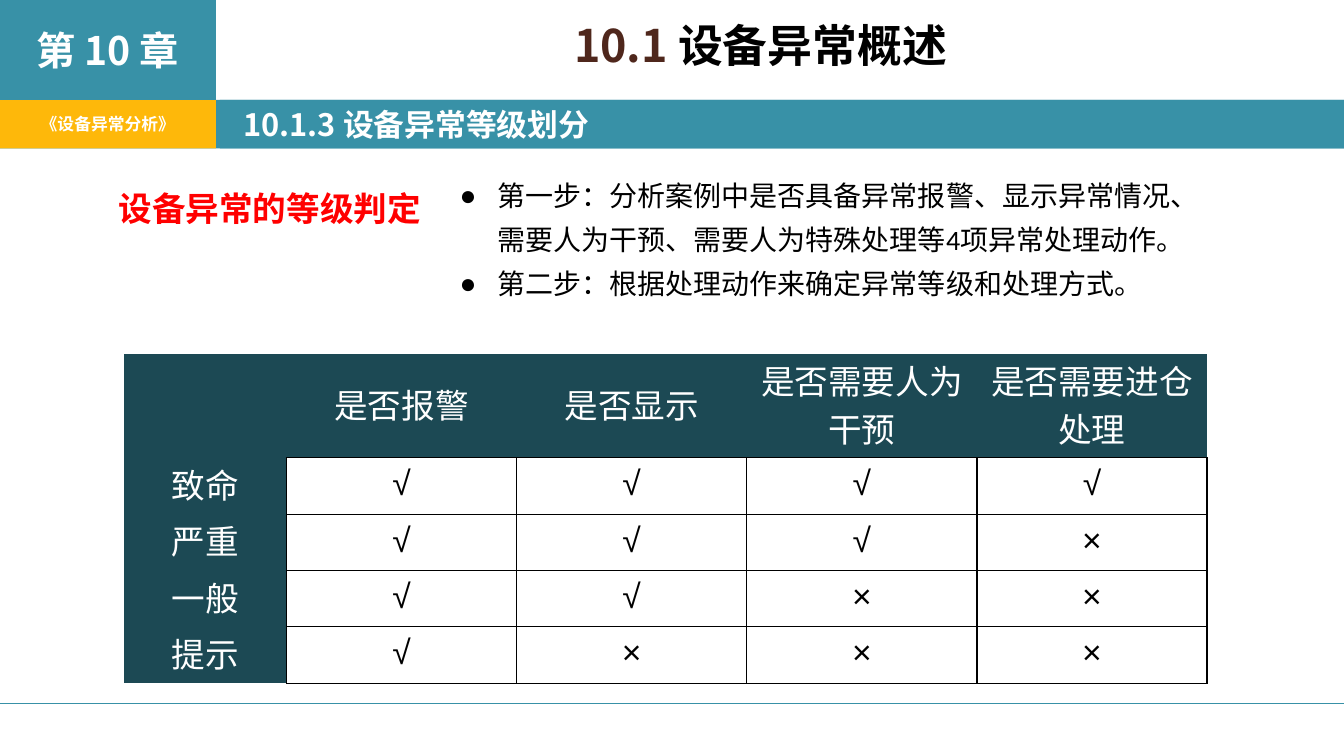
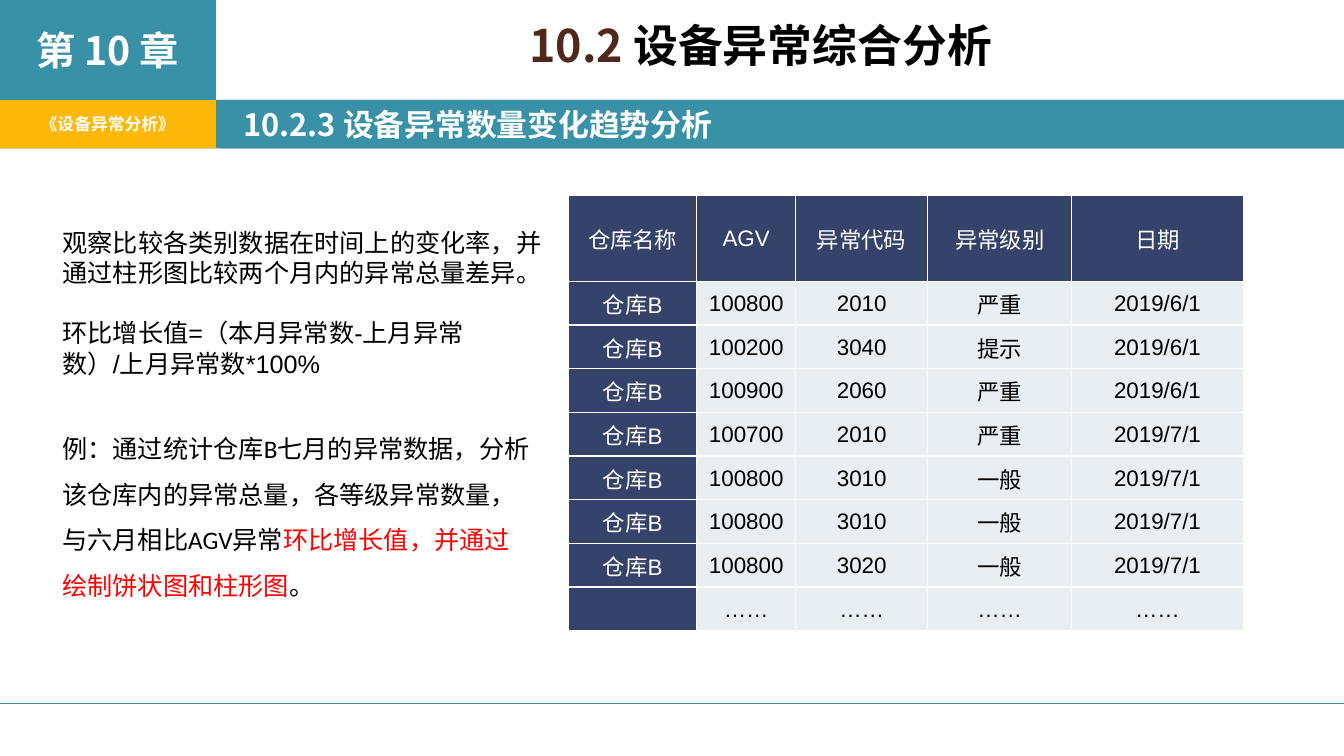
"""Build two lecture slides on equipment anomaly grading and trends."""
from lxml import etree
from pptx import Presentation
from pptx.dml.color import RGBColor
from pptx.enum.shapes import MSO_CONNECTOR, MSO_SHAPE
from pptx.enum.text import MSO_ANCHOR, MSO_AUTO_SIZE, PP_ALIGN
from pptx.oxml.ns import qn
from pptx.util import Cm, Pt

RECT, STRAIGHT = MSO_SHAPE.RECTANGLE, MSO_CONNECTOR.STRAIGHT
TOP, MIDDLE = MSO_ANCHOR.TOP, MSO_ANCHOR.MIDDLE
LEFT, CENTER = PP_ALIGN.LEFT, PP_ALIGN.CENTER
NO_FIT = MSO_AUTO_SIZE.NONE

CJK = "Noto Sans CJK SC"
COLORS = {
    "teal": "3891A7", "amber": "FEB80A", "brown": "4F271C", "dark": "1C4954",
    "navy": "35436A", "pale": "E8EEF1", "red": "FF0000",
    "black": "000000", "white": "FFFFFF",
}
WIDTH, HEIGHT = 33.87, 19.05
SIDE_W, BAND_Y, BAND_H = 5.44, 2.52, 1.22
NO_GRID_STYLE = "{2D5ABB26-0587-4C30-8999-92F81FD0307C}"

CHAPTER = "第 10 章"
BOOK = "《设备异常分析》"

GRADING = {
    "number": "10.1 ", "title": "设备异常概述", "section": "10.1.3 设备异常等级划分",
    "label": "设备异常的等级判定",
    "steps": [
        "第一步：分析案例中是否具备异常报警、显示异常情况、需要人为干预、需要人为特殊处理等4项异常处理动作。",
        "第二步：根据处理动作来确定异常等级和处理方式。",
    ],
    "table": [
        ("", "是否报警", "是否显示", "是否需要人为干预", "是否需要进仓处理"),
        ("致命", "√", "√", "√", "√"),
        ("严重", "√", "√", "√", "×"),
        ("一般", "√", "√", "×", "×"),
        ("提示", "√", "×", "×", "×"),
    ],
}

TREND = {
    "number": "10.2 ", "title": "设备异常综合分析", "section": "10.2.3 设备异常数量变化趋势分析",
    "method": [
        "观察比较各类别数据在时间上的变化率，并通过柱形图比较两个月内的异常总量差异。",
        "环比增长值=（本月异常数-上月异常数）/上月异常数*100%",
    ],
    "example": [
        ("例：通过统计仓库B七月的异常数据，分析该仓库内的异常总量，各等级异常数量，与六月相比AGV异常", "black"),
        ("环比增长值，并通过绘制饼状图和柱形图", "red"),
        ("。", "black"),
    ],
    "table": [
        ("仓库名称", "AGV", "异常代码", "异常级别", "日期"),
        ("仓库B", "100800", "2010", "严重", "2019/6/1"),
        ("仓库B", "100200", "3040", "提示", "2019/6/1"),
        ("仓库B", "100900", "2060", "严重", "2019/6/1"),
        ("仓库B", "100700", "2010", "严重", "2019/7/1"),
        ("仓库B", "100800", "3010", "一般", "2019/7/1"),
        ("仓库B", "100800", "3010", "一般", "2019/7/1"),
        ("仓库B", "100800", "3020", "一般", "2019/7/1"),
        ("", "……", "……", "……", "……"),
    ],
}


def rgb(name):
    return RGBColor.from_string(COLORS[name])


def add_run(p, text, size, color, font=CJK, bold=False):
    r = p.add_run()
    r.text = text
    r.font.size, r.font.bold = Pt(size), bold
    r.font.color.rgb = rgb(color)
    r.font.name = font
    has_cjk = any("\u4e00" <= ch <= "\u9fff" for ch in text)
    etree.SubElement(r.font._element, qn("a:ea"), typeface=CJK if has_cjk else font)


def place(sp, left, top, width, height):
    sp.left, sp.top, sp.width, sp.height = map(Cm, (left, top, width, height))


def setup_frame(tf, anchor=TOP):
    tf.word_wrap = True
    tf.auto_size = NO_FIT
    tf.vertical_anchor = anchor
    return tf


def add_box(s, box):
    return setup_frame(s.shapes.add_textbox(*map(Cm, box)).text_frame)


def add_band(s, box, color):
    sp = s.shapes.add_shape(RECT, *map(Cm, box))
    sp.shadow.inherit = False
    sp.fill.solid()
    sp.fill.fore_color.rgb = rgb(color)
    sp.line.fill.background()
    return setup_frame(sp.text_frame, MIDDLE)


def fill_body(sp, texts, size, font, spacing, gap=0, bullet=None):
    tf = setup_frame(sp.text_frame)
    for i, text in enumerate(texts):
        p = tf.add_paragraph() if i else tf.paragraphs[0]
        p.line_spacing = Pt(spacing)
        p.space_before = Pt(gap if i else 0)
        pPr = p._p.get_or_add_pPr()
        indent = Cm(0.95) if bullet else 0
        pPr.set("marL", str(indent))
        pPr.set("indent", str(-indent))
        if bullet:
            etree.SubElement(pPr, qn("a:buChar"), char=bullet)
        else:
            etree.SubElement(pPr, qn("a:buNone"))
        add_run(p, text, size, "black", font)


def start_slide(prs, content):
    s = prs.slides.add_slide(prs.slide_layouts[1])
    add_band(s, (0, BAND_Y, WIDTH, BAND_H), "teal")
    side_bands = [
        ((0, BAND_Y, SIDE_W, BAND_H), "amber", BOOK, 12),
        ((0, 0, SIDE_W, BAND_Y), "teal", CHAPTER, 28),
    ]
    for box, color, text, size in side_bands:
        p = add_band(s, box, color).paragraphs[0]
        p.alignment = CENTER
        add_run(p, text, size, "white", bold=True)

    tf = add_band(s, (5.54, BAND_Y, WIDTH - 5.54, BAND_H), "teal")
    tf.margin_left = Cm(0.6)
    tf.paragraphs[0].alignment = LEFT
    add_run(tf.paragraphs[0], content["section"], 22, "white", bold=True)

    rule = s.shapes.add_connector(STRAIGHT, 0, Cm(17.73), Cm(WIDTH), Cm(17.73))
    rule.line.color.rgb = rgb("teal")
    rule.line.width = Pt(0.79)
    etree.SubElement(rule.element.spPr, qn("a:effectLst"))

    title = s.shapes.title
    place(title, 5.87, 0.48, 26.6, 2.03)
    p = setup_frame(title.text_frame).paragraphs[0]
    p.alignment, p.line_spacing = CENTER, 0.9
    add_run(p, content["number"], 32, "brown", bold=True)
    add_run(p, content["title"], 32, "black", bold=True)
    return s


def add_borders(cell, sides, color):
    tcPr = cell._tc.get_or_add_tcPr()
    for i, side in enumerate(sides):
        ln = etree.Element(qn(f"a:ln{side}"), w=str(Pt(1)))
        fill = etree.SubElement(ln, qn("a:solidFill"))
        etree.SubElement(fill, qn("a:srgbClr"), val=COLORS[color])
        tcPr.insert(i, ln)


def add_grid(s, rows, left, top, widths, heights, look):
    gf = s.shapes.add_table(len(rows), len(widths), Cm(left), Cm(top),
                            Cm(sum(widths)), Cm(sum(heights)))
    for style in gf.element.iter(qn("a:tableStyleId")):
        style.text = NO_GRID_STYLE
    for col, width in zip(gf.table.columns, widths):
        col.width = Cm(width)
    for row, height in zip(gf.table.rows, heights):
        row.height = Cm(height)
    for i, row in enumerate(rows):
        for j, text in enumerate(row):
            cell = gf.table.cell(i, j)
            header = i == 0 or j == 0
            cell.fill.solid()
            cell.fill.fore_color.rgb = rgb(look["head" if header else "body"])
            cell.vertical_anchor = MIDDLE
            cell.margin_left = cell.margin_right = cell.margin_top = Cm(0.03)
            cell.margin_bottom = Cm(look["bottom"])
            sides = "LRTB"
            if header and not look["head_grid"]:
                sides = "R" if i else "B" if j else ""
            add_borders(cell, sides, look["border"])
            if text:
                p = cell.text_frame.paragraphs[0]
                p.alignment = CENTER
                add_run(p, text, look["size"], "white" if header else "black",
                        look["head_font"] if header else "Arial")


def grading_slide(prs):
    s = start_slide(prs, GRADING)
    look = {"head": "dark", "body": "white", "border": "black", "head_grid": False,
            "size": 24, "head_font": CJK, "bottom": 0.13}
    add_grid(s, GRADING["table"], 3.12, 8.92, [4.1] + [5.8] * 4, [2.41] + [1.42] * 4, look)
    p = add_box(s, (2.74, 4.52, 8.15, 1.27)).paragraphs[0]
    p.line_spacing = Pt(31)
    add_run(p, GRADING["label"], 24, "red", "Calibri", True)
    body = s.placeholders[1]
    place(body, 11.33, 4.11, 18.85, 4.24)
    fill_body(body, GRADING["steps"], 20, "Calibri", 31.5, bullet="●")


def trend_slide(prs):
    s = start_slide(prs, TREND)
    body = s.placeholders[1]
    place(body, 1.32, 5.59, 12.6, 4.11)
    fill_body(body, TREND["method"], 18, "Arial", 21.6, gap=21.6)
    look = {"head": "navy", "body": "pale", "border": "white", "head_grid": True,
            "size": 16, "head_font": "Arial", "bottom": 0}
    add_grid(s, TREND["table"], 14.33, 4.93, [3.23, 2.49, 3.33, 3.63, 4.32],
             [2.16] + [1.1] * 8, look)
    p = add_box(s, (1.32, 10.41, 12.4, 4.75)).paragraphs[0]
    p.line_spacing = Pt(32.5)
    for text, color in TREND["example"]:
        add_run(p, text, 18, color, "Calibri")


def main():
    prs = Presentation()
    prs.slide_width, prs.slide_height = Cm(WIDTH), Cm(HEIGHT)
    grading_slide(prs)
    trend_slide(prs)
    prs.save("out.pptx")


if __name__ == "__main__":
    main()
